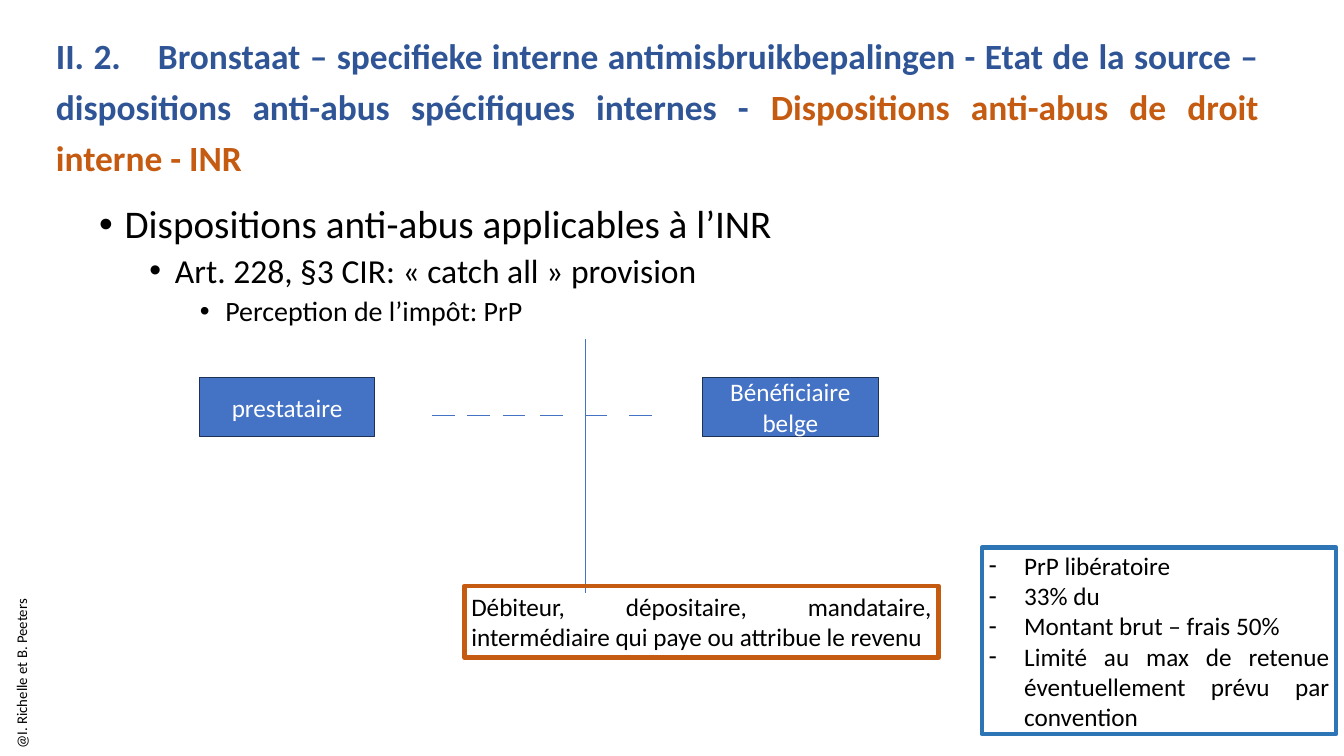
from lxml.etree import SubElement
from pptx import Presentation
from pptx.dml.color import RGBColor
from pptx.enum.shapes import MSO_CONNECTOR, MSO_SHAPE
from pptx.enum.text import MSO_ANCHOR, PP_ALIGN
from pptx.oxml.ns import qn
from pptx.util import Pt

PX = 9144  # EMU per px, 100 px to the inch
FONT = "Calibri"
COLORS = {
    "black": "000000",
    "white": "FFFFFF",
    "blue": "4472C4",
    "box_edge": "1E3256",
    "title_blue": "2F5597",
    "note_blue": "2E75B6",
    "orange": "C55A11",
}


def style_paragraph(paragraph, size, color, align=PP_ALIGN.LEFT, spacing=1.0):
    paragraph.font.name = FONT
    paragraph.font.size = Pt(size)
    paragraph.font.color.rgb = RGBColor.from_string(COLORS[color])
    paragraph.alignment = align
    paragraph.line_spacing = spacing


def add_bullet(paragraph, character, left, hanging):
    """Give the paragraph a bullet, with its left margin and hanging indent in px."""
    properties = paragraph._p.get_or_add_pPr()
    properties.set("marL", str(left * PX))
    properties.set("indent", str(-hanging * PX))
    SubElement(properties, qn("a:buFont"), typeface="Arial")
    SubElement(properties, qn("a:buChar"), char=character)


presentation = Presentation()
presentation.slide_width = 1896 * PX
presentation.slide_height = 1067 * PX
slide = presentation.slides.add_slide(presentation.slide_layouts[6])
shapes = slide.shapes

# Credit along the left edge
credit = shapes.add_textbox(-183 * PX, 838 * PX, 419 * PX, 38 * PX)
credit.rotation = 270
credit.text_frame.word_wrap = True
credit.text_frame.text = "@I. Richelle et B. Peeters"
style_paragraph(credit.text_frame.paragraphs[0], 15, "black", spacing=1.2)

# Outline of the topic
outline = shapes.add_textbox(130 * PX, 284 * PX, 1755 * PX, 752 * PX)
outline.text_frame.word_wrap = True
outline_items = [
    ("Dispositions anti-abus applicables à l’INR", 39.8, 14.2),
    ("Art. 228, §3 CIR: « catch all » provision", 34.1, 7.1),
    ("Perception de l’impôt: PrP", 28.4, 7.1),
]
outline.text_frame.text = "\n".join(text for text, _, _ in outline_items)
for level, paragraph in enumerate(outline.text_frame.paragraphs):
    _, size, space_before = outline_items[level]
    paragraph.level = level
    style_paragraph(paragraph, size, "black", spacing=0.9)
    paragraph.space_before = Pt(space_before)
    add_bullet(paragraph, "•", 36 + 71 * level, 36)

# Border between the two states, and the dashed link across it
border = (825, 478, 825, 837)
dashes = [(left, 586, left + 32, 586) for left in (610, 659, 709, 762, 825, 888)]
for ends in [border, *dashes]:
    connector = shapes.add_connector(MSO_CONNECTOR.STRAIGHT, *[end * PX for end in ends])
    connector.line.color.rgb = RGBColor.from_string(COLORS["blue"])
    connector.line.width = Pt(0.5)
    SubElement(connector._element.spPr, qn("a:effectLst"))

# Parties, paying agent and tax note
boxes = [
    ((281, 533, 248, 83), "blue", "box_edge", 1, "white", PP_ALIGN.CENTER, False,
     ["prestataire"]),
    ((991, 533, 248, 83), "blue", "box_edge", 1, "white", PP_ALIGN.CENTER, False,
     ["Bénéficiaire belge"]),
    ((655, 827, 669, 101), None, "orange", 4.5, "black", PP_ALIGN.JUSTIFY, False,
     ["Débiteur, dépositaire, mandataire, intermédiaire qui paye ou attribue le revenu"]),
    ((1385, 773, 500, 263), None, "note_blue", 4.5, "black", PP_ALIGN.JUSTIFY, True,
     ["PrP libératoire", "33% du", "Montant brut – frais 50%",
      "Limité au max de retenue éventuellement prévu par convention"]),
]
for bounds, fill, edge, edge_width, text_color, align, bulleted, lines in boxes:
    box = shapes.add_shape(MSO_SHAPE.RECTANGLE, *[length * PX for length in bounds])
    box.shadow.inherit = False
    if fill:
        box.fill.solid()
        box.fill.fore_color.rgb = RGBColor.from_string(COLORS[fill])
    else:
        box.fill.background()
    box.line.color.rgb = RGBColor.from_string(COLORS[edge])
    box.line.width = Pt(edge_width)
    box.text_frame.word_wrap = True
    box.text_frame.vertical_anchor = MSO_ANCHOR.MIDDLE
    box.text_frame.text = "\n".join(lines)
    for paragraph in box.text_frame.paragraphs:
        style_paragraph(paragraph, 25.6, text_color, align)
        if bulleted:
            add_bullet(paragraph, "-", 50, 50)

# Title, with a tab stop after its number
title = shapes.add_textbox(69 * PX, 31 * PX, 1717 * PX, 223 * PX)
title.text_frame.word_wrap = True
heading = title.text_frame.paragraphs[0]
style_paragraph(heading, 36, "title_blue", PP_ALIGN.JUSTIFY, 1.2)
heading.font.bold = True
tab_stops = SubElement(heading._p.get_or_add_pPr(), qn("a:tabLst"))
SubElement(tab_stops, qn("a:tab"), pos=str(142 * PX), algn="l")
# The default run properties stay last among the paragraph properties
tab_stops.addnext(heading._p.pPr.find(qn("a:defRPr")))
title_runs = [
    ("II. 2.\tBronstaat – specifieke interne antimisbruikbepalingen - Etat de la source – "
     "dispositions anti-abus spécifiques internes - ", "title_blue"),
    ("Dispositions anti-abus de droit interne - INR", "orange"),
]
for text, color in title_runs:
    run = heading.add_run()
    run.text = text
    run.font.name = FONT
    run.font.size = Pt(36)
    run.font.bold = True
    run.font.color.rgb = RGBColor.from_string(COLORS[color])

# Bullets go before the default run properties
for shape in shapes:
    if shape.has_text_frame:
        for paragraph in shape.text_frame.paragraphs:
            properties = paragraph._p.pPr
            properties.append(properties.find(qn("a:defRPr")))

presentation.save("out.pptx")
